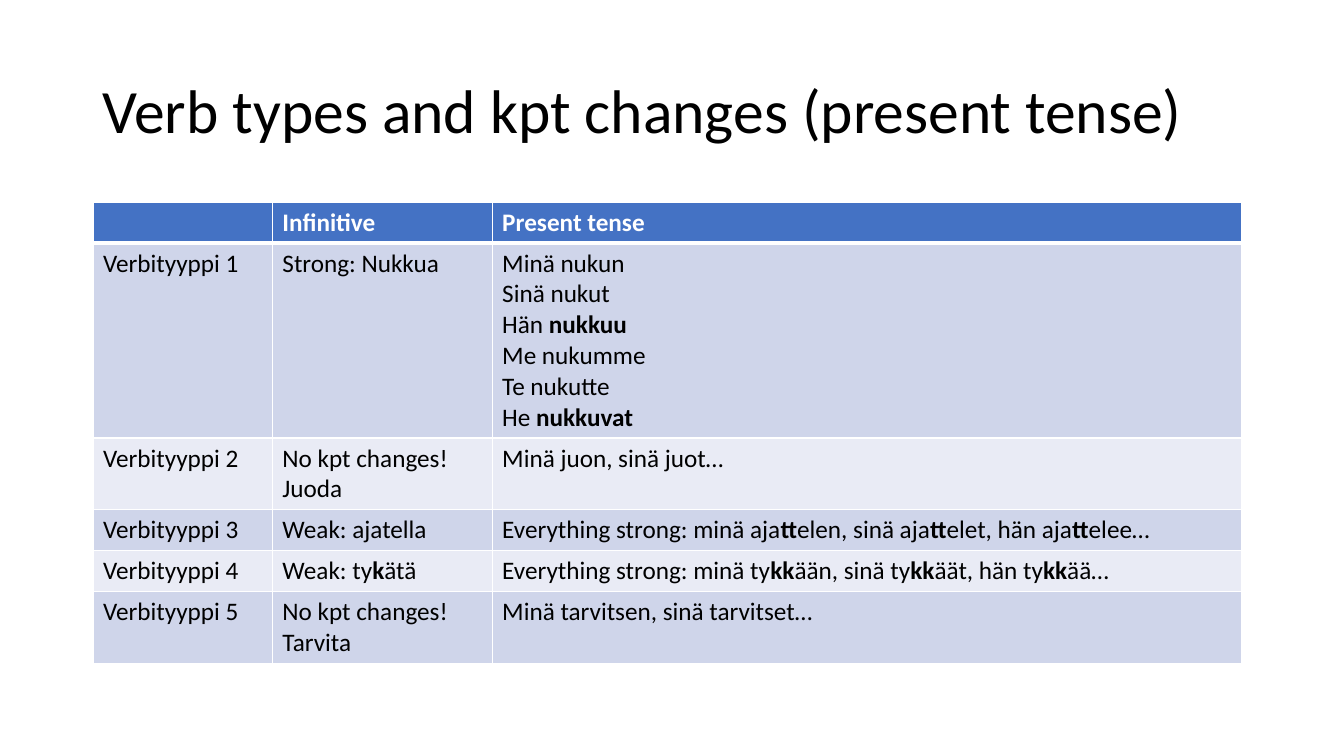
from lxml.etree import SubElement
from pptx import Presentation
from pptx.dml.color import RGBColor
from pptx.enum.text import MSO_ANCHOR, MSO_AUTO_SIZE, PP_ALIGN
from pptx.oxml.ns import qn
from pptx.util import Pt

FONT = "Calibri"
BLACK, WHITE, BLUE = "000000", "FFFFFF", "4472C4"
BANDS = ["CFD5EA", "E9EBF5"]
WIDTHS = [128.2, 157, 535.6]
LINE, PAD = 22, 7.2

# Asterisks enclose bold letters; a line break starts a new paragraph.
ROWS = [
    ["", "Infinitive", "Present tense"],
    ["Verbityyppi 1", "Strong: Nukkua",
     "Minä nukun\nSinä nukut\nHän *nukkuu*\n"
     "Me nukumme\nTe nukutte\nHe *nukkuvat*"],
    ["Verbityyppi 2", "No kpt changes!\nJuoda", "Minä juon, sinä juot…"],
    ["Verbityyppi 3", "Weak: ajatella",
     "Everything strong: minä aja*tt*elen, sinä aja*tt*elet, hän aja*tt*elee…"],
    ["Verbityyppi 4", "Weak: ty*k*ätä",
     "Everything strong: minä ty*kk*ään, sinä ty*kk*äät, hän ty*kk*ää…"],
    ["Verbityyppi 5", "No kpt changes!\nTarvita",
     "Minä tarvitsen, sinä tarvitset…"],
]


def paint(target, color):
    target.rgb = RGBColor.from_string(color)


def style(para, size, color):
    para.font.name = FONT
    para.font.size = Pt(size)
    paint(para.font.color, color)


def add_title(slide, text, left, top, width, height):
    title = slide.shapes.title
    title.left, title.top = Pt(left), Pt(top)
    title.width, title.height = Pt(width), Pt(height)
    frame = title.text_frame
    frame.text = text
    frame.auto_size = MSO_AUTO_SIZE.NONE
    frame.vertical_anchor = MSO_ANCHOR.MIDDLE
    para = frame.paragraphs[0]
    para.alignment = PP_ALIGN.LEFT
    para.line_spacing = 0.9
    style(para, 44, BLACK)


def add_borders(cell, row):
    """Draw white cell borders, thicker between the header and the body."""
    props = cell._tc.get_or_add_tcPr()
    thick = {(0, "lnB"), (1, "lnT")}
    for side in ["lnL", "lnR", "lnT", "lnB"]:
        width = Pt(3 if (row, side) in thick else 1)
        line = SubElement(props, qn(f"a:{side}"), w=str(width))
        fill = SubElement(line, qn("a:solidFill"))
        SubElement(fill, qn("a:srgbClr"), val=WHITE)


def fill_cell(cell, text, row):
    add_borders(cell, row)
    cell.fill.solid()
    paint(cell.fill.fore_color, BANDS[(row - 1) % 2] if row else BLUE)
    frame = cell.text_frame
    for i, line in enumerate(text.split("\n")):
        para = frame.add_paragraph() if i else frame.paragraphs[0]
        style(para, 18, BLACK if row else WHITE)
        if row == 0:
            para.font.bold = True
        for j, part in enumerate(line.split("*")):
            if part:
                run = para.add_run()
                run.text = part
                if j % 2:
                    run.font.bold = True


def add_verbs(slide, left, top):
    heights = [PAD + LINE * max(text.count("\n") + 1 for text in row)
               for row in ROWS]
    table = slide.shapes.add_table(
        len(ROWS), len(WIDTHS), Pt(left), Pt(top),
        Pt(sum(WIDTHS)), Pt(sum(heights))).table
    for column, width in zip(table.columns, WIDTHS):
        column.width = Pt(width)
    for r, texts in enumerate(ROWS):
        table.rows[r].height = Pt(heights[r])
        for c, text in enumerate(texts):
            fill_cell(table.cell(r, c), text, r)


def main():
    deck = Presentation()
    deck.slide_width, deck.slide_height = Pt(960), Pt(540)
    slide = deck.slides.add_slide(deck.slide_layouts[5])
    add_title(slide, "Verb types and kpt changes (present tense)",
              66, 28.8, 828, 104.4)
    add_verbs(slide, 66.4, 144.5)
    deck.save("out.pptx")


if __name__ == "__main__":
    main()
